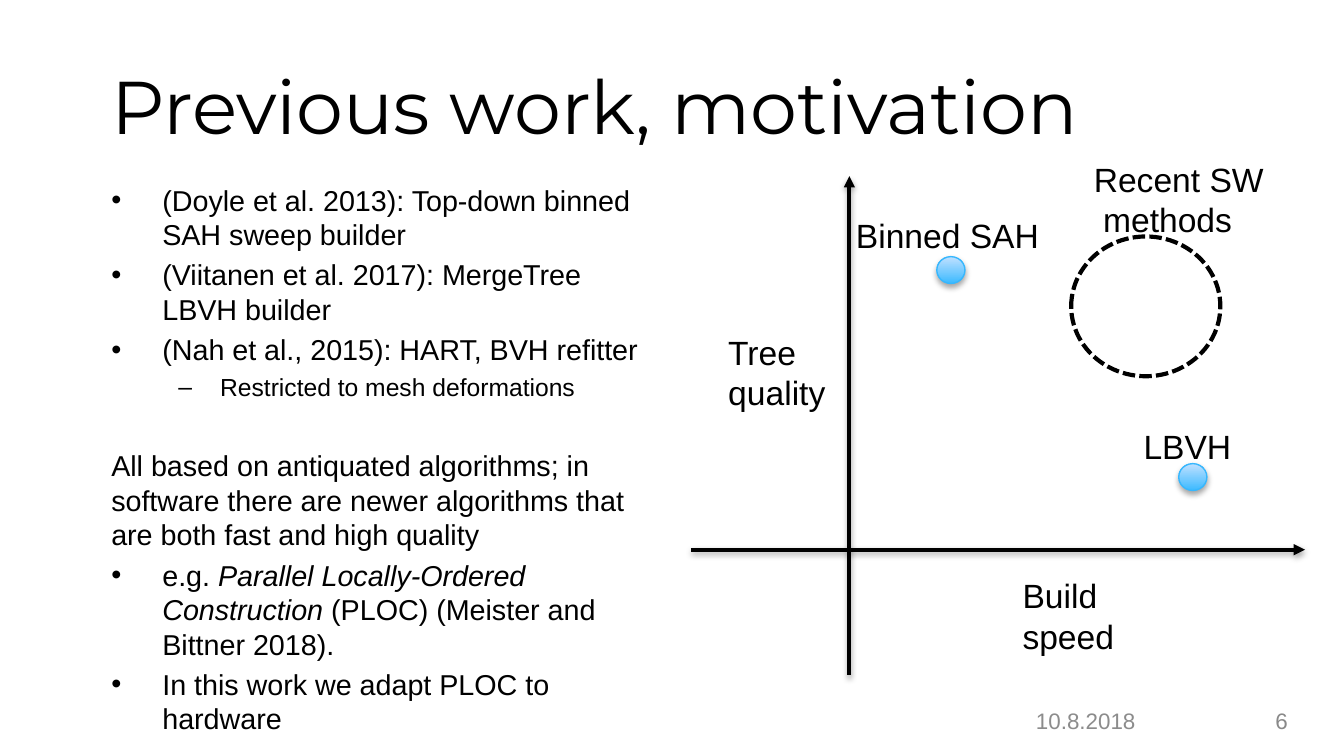
from dataclasses import dataclass

from lxml import etree
from pptx import Presentation
from pptx import util as u
from pptx.dml.color import RGBColor
from pptx.enum import dml, shapes, text
from pptx.oxml import ns

UNIT = 0.1  # inches: the slide is a grid of 100 columns by 56.25 rows
COLS, ROWS = 100, 56.25


@dataclass(frozen=True)
class Theme:
    sans: str = "Arial"
    head: str = "Montserrat"
    ink: str = "000000"
    date: str = "8C8C8C"
    page: str = "898989"
    edge: str = "36B7FE"
    deep: str = "3CBAFF"
    pale: str = "C0E0FF"
    title: float = 40
    label: float = 18
    body: float = 15.4
    sub: float = 13.2
    foot: float = 12


T = Theme()


def grid(*cells):
    return [u.Inches(c * UNIT) for c in cells]


def color(code):
    return RGBColor.from_string(code)


def style(para, size, code=T.ink, font=T.sans):
    for run in para.runs:
        run.font.size = u.Pt(size)
        run.font.name = font
        run.font.color.rgb = color(code)


def node(parent, tag, **attrs):
    return etree.SubElement(parent, ns.qn(tag), attrs)


def shade(shape, alpha, dist):
    """Soft shadow straight below; alpha in percent, dist in points."""
    fx = node(shape._element.spPr, "a:effectLst")
    drop = node(fx, "a:outerShdw", blurRad=str(u.Pt(3.1)), dist=str(u.Pt(dist)),
                dir="5400000", rotWithShape="0")
    rgb = node(drop, "a:srgbClr", val=T.ink)
    node(rgb, "a:alpha", val=str(alpha * 1000))


def frame(slide, box, anchor=text.MSO_ANCHOR.TOP):
    tf = slide.shapes.add_textbox(*grid(*box)).text_frame
    tf.word_wrap = True
    tf.vertical_anchor = anchor
    return tf


def label(slide, box, words, size=T.label, code=T.ink, font=T.sans,
          anchor=text.MSO_ANCHOR.TOP, align=text.PP_ALIGN.LEFT):
    tf = frame(slide, box, anchor)
    tf.text = words
    for para in tf.paragraphs:
        para.alignment = align
        style(para, size, code, font)


def bullet(para, mark, left, hang):
    props = para._p.get_or_add_pPr()
    props.set("marL", str(u.Inches(left)))
    props.set("indent", str(-u.Inches(hang)))
    node(props, "a:buFont", typeface=T.sans)
    node(props, "a:buChar", char=mark)


def body(slide, box, items):
    """Items are (kind, words, space before); *stars* enclose italics."""
    kinds = {"dot": ("•", 0.38, 0.38), "dash": ("–", 0.81, 0.31)}
    tf = frame(slide, box)
    for i, (kind, words, gap) in enumerate(items):
        para = tf.add_paragraph() if i else tf.paragraphs[0]
        if kind in kinds:
            bullet(para, *kinds[kind])
        para.space_before = u.Pt(gap)
        for j, part in enumerate(words.split("*")):
            run = para.add_run()
            run.text = part
            run.font.italic = j % 2 == 1
        style(para, T.sub if kind == "dash" else T.body)


def axis(slide, *ends):
    line = slide.shapes.add_connector(shapes.MSO_CONNECTOR.STRAIGHT, *grid(*ends))
    line.line.color.rgb = color(T.ink)
    line.line.width = u.Pt(2)
    node(line.line._get_or_add_ln(), "a:tailEnd", type="triangle")
    shade(line, 38, 1.6)


def oval(slide, *box):
    return slide.shapes.add_shape(shapes.MSO_SHAPE.OVAL, *grid(*box))


def point(slide, left, top):
    dot = oval(slide, left, top, 2.1, 2)
    dot.fill.gradient()
    dot.fill.gradient_angle = 90
    for stop, code in zip(dot.fill.gradient_stops, (T.deep, T.pale)):
        stop.color.rgb = color(code)
    dot.line.color.rgb = color(T.edge)
    dot.line.width = u.Pt(0.75)
    shade(dot, 35, 1.8)


def region(slide, *box):
    ring = oval(slide, *box)
    ring.shadow.inherit = False
    ring.fill.background()
    ring.line.color.rgb = color(T.ink)
    ring.line.width = u.Pt(2.25)
    ring.line.dash_style = dml.MSO_LINE.SQUARE_DOT
    ring.line._get_or_add_ln().find(ns.qn("a:prstDash")).set("val", "sysDash")


def plot(slide):
    axis(slide, 51.4, 40.9, 97.1, 40.9)
    axis(slide, 63.2, 50.2, 63.2, 13.1)
    label(slide, (75.1, 42.3, 13.9, 7.1), "Build speed")
    label(slide, (53.2, 24.2, 13.9, 7.1), "Tree\nquality")
    point(slide, 69.7, 19.1)
    point(slide, 87.7, 34.5)
    label(slide, (62.7, 15.5, 15.9, 4), "Binned SAH")
    label(slide, (84.1, 31.2, 15.9, 4), "LBVH")
    region(slide, 79.7, 17.6, 11.1, 10.4)
    label(slide, (80.4, 11.3, 15.9, 7.1), "Recent SW\n methods")


def main():
    deck = Presentation()
    deck.slide_width, deck.slide_height = grid(COLS, ROWS)
    slide = deck.slides.add_slide(deck.slide_layouts[6])
    mid = text.MSO_ANCHOR.MIDDLE
    label(slide, (7.3, 3.1, 89.8, 9.4), "Previous work, motivation",
          T.title, font=T.head, anchor=mid)
    body(slide, (7.3, 13.1, 42.6, 37.1), [
        ("dot", "(Doyle et al. 2013): Top-down binned SAH sweep builder", 0),
        ("dot", "(Viitanen et al. 2017): MergeTree LBVH builder", 3),
        ("dot", "(Nah et al., 2015): HART, BVH refitter", 3),
        ("dash", "Restricted to mesh deformations", 3),
        ("plain", "All based on antiquated algorithms; in software there are "
                  "newer algorithms that are both fast and high quality", 25),
        ("dot", "e.g. *Parallel Locally-Ordered Construction *(PLOC) "
                "(Meister and Bittner 2018).", 3),
        ("dot", "In this work we adapt PLOC to hardware", 3),
    ])
    label(slide, (76.1, 52.1, 11.5, 3), "10.8.2018", T.foot, T.date, anchor=mid)
    label(slide, (89.4, 52.1, 7.4, 3), "6", T.foot, T.page, anchor=mid,
          align=text.PP_ALIGN.RIGHT)
    plot(slide)
    deck.save("out.pptx")


if __name__ == "__main__":
    main()
